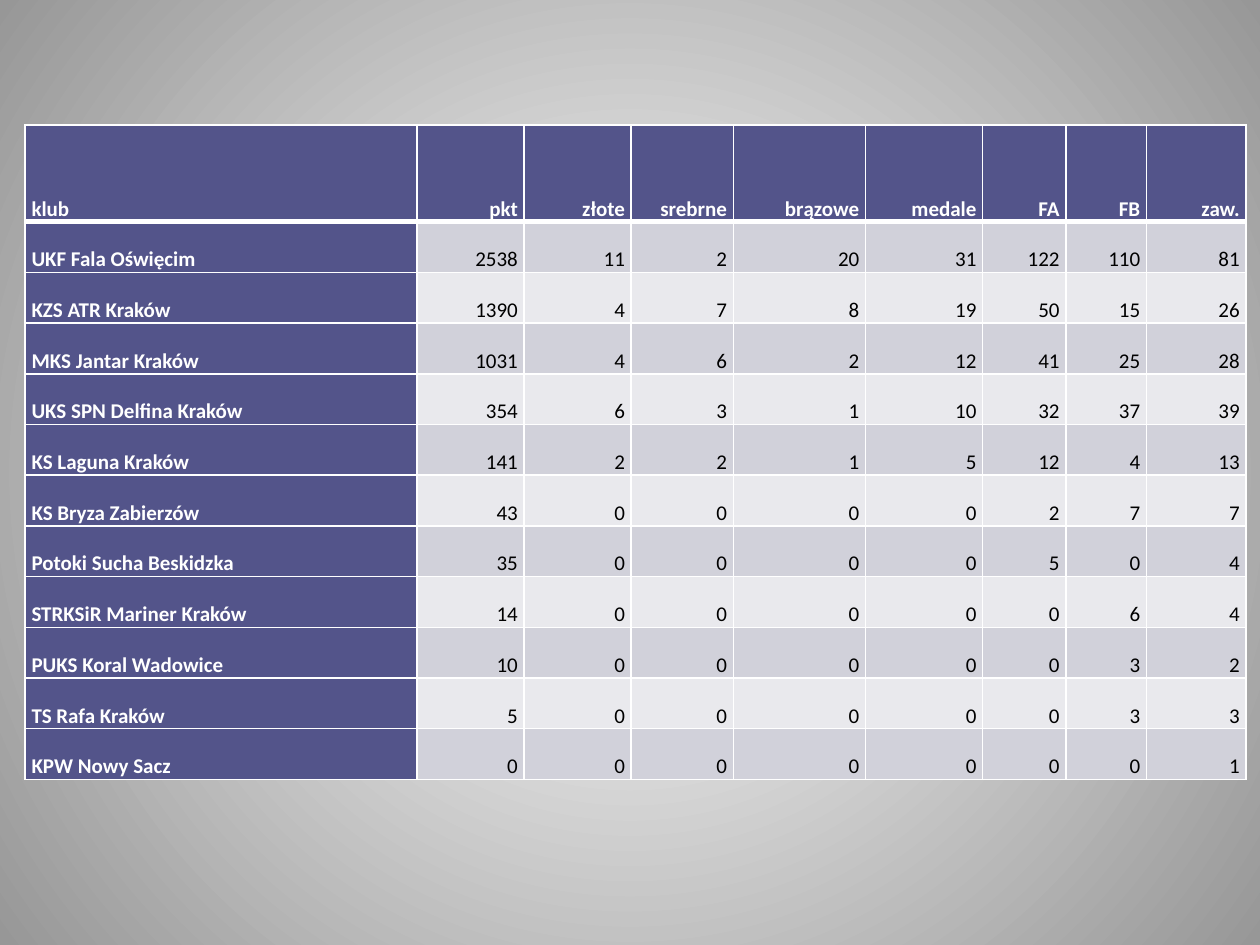
from lxml import etree
from pptx import Presentation
from pptx.dml.color import RGBColor
from pptx.enum.text import MSO_ANCHOR, PP_ALIGN
from pptx.oxml import parse_xml
from pptx.oxml.ns import nsdecls, qn
from pptx.util import Inches, Pt

BOTTOM = MSO_ANCHOR.BOTTOM
LEFT, RIGHT = PP_ALIGN.LEFT, PP_ALIGN.RIGHT

COLORS = {
    "center": "FFFFFF",
    "edge": "979797",
    "head": "53548A",
    "band_dark": "D1D1DA",
    "band_light": "E9E9ED",
    "border": "FFFFFF",
    "head_text": "FFFFFF",
    "text": "000000",
}
COL_WIDTHS = [3.11, 0.85, 0.85, 0.81, 1.05, 0.93, 0.66, 0.64, 0.79]

ROWS = [
    ("klub", "pkt", "złote", "srebrne", "brązowe", "medale", "FA", "FB", "zaw."),
    ("UKF Fala Oświęcim", 2538, 11, 2, 20, 31, 122, 110, 81),
    ("KZS ATR Kraków", 1390, 4, 7, 8, 19, 50, 15, 26),
    ("MKS Jantar Kraków", 1031, 4, 6, 2, 12, 41, 25, 28),
    ("UKS SPN Delfina Kraków", 354, 6, 3, 1, 10, 32, 37, 39),
    ("KS Laguna Kraków", 141, 2, 2, 1, 5, 12, 4, 13),
    ("KS Bryza Zabierzów", 43, 0, 0, 0, 0, 2, 7, 7),
    ("Potoki Sucha Beskidzka", 35, 0, 0, 0, 0, 5, 0, 4),
    ("STRKSiR Mariner Kraków", 14, 0, 0, 0, 0, 0, 6, 4),
    ("PUKS Koral Wadowice", 10, 0, 0, 0, 0, 0, 3, 2),
    ("TS Rafa Kraków", 5, 0, 0, 0, 0, 0, 3, 3),
    ("KPW Nowy Sacz", 0, 0, 0, 0, 0, 0, 0, 1),
]
TABLE_HEIGHT, HEAD_HEIGHT = 5.2, 0.77
ROW_HEIGHT = (TABLE_HEIGHT - HEAD_HEIGHT) / (len(ROWS) - 1)


def rgb(name):
    return RGBColor.from_string(COLORS[name])


def set_borders(cell, top, bottom):
    """Draw all four cell borders; the side borders are 1 pt wide."""
    tc_pr = cell._tc.get_or_add_tcPr()
    widths = {"lnL": 1, "lnR": 1, "lnT": top, "lnB": bottom}
    for i, (tag, width) in enumerate(widths.items()):
        tc_pr.insert(i, parse_xml(
            f'<a:{tag} {nsdecls("a")} w="{Pt(width)}"><a:solidFill>'
            f'<a:srgbClr val="{COLORS["border"]}"/></a:solidFill></a:{tag}>'))


prs = Presentation()
prs.slide_width, prs.slide_height = Inches(10), Inches(7.5)
s = prs.slides.add_slide(prs.slide_layouts[6])

# Background: circular gradient from the middle of the slide
fill = s.background.fill
fill.gradient()
for stop, position, name in zip(fill.gradient_stops, (0, 1), ("center", "edge")):
    stop.position = position
    stop.color.rgb = rgb(name)
grad = s.element.find(".//" + qn("a:gradFill"))
grad.remove(grad.find(qn("a:lin")))
circle = etree.SubElement(grad, qn("a:path"), {"path": "circle"})
etree.SubElement(circle, qn("a:fillToRect"), dict.fromkeys("ltrb", "50000"))

# Club standings
table = s.shapes.add_table(len(ROWS), len(COL_WIDTHS), Inches(0.2), Inches(0.99),
                           Inches(sum(COL_WIDTHS)), Inches(TABLE_HEIGHT)).table
for column, width in zip(table.columns, COL_WIDTHS):
    column.width = Inches(width)

for i, values in enumerate(ROWS):
    table.rows[i].height = Inches(ROW_HEIGHT if i else HEAD_HEIGHT)
    band = "band_dark" if i % 2 else "band_light"
    for j, value in enumerate(values):
        is_head = i == 0 or j == 0
        cell = table.cell(i, j)
        cell.fill.solid()
        cell.fill.fore_color.rgb = rgb("head" if is_head else band)
        set_borders(cell, top=3 if i == 1 else 1, bottom=3 if i == 0 else 1)
        cell.vertical_anchor = BOTTOM
        cell.margin_left = cell.margin_right = Inches(0.05)
        cell.margin_top = cell.margin_bottom = 0
        p = cell.text_frame.paragraphs[0]
        p.text = str(value)
        p.alignment = RIGHT if j else LEFT
        p.line_spacing = 1.07
        font = p.runs[0].font
        font.name, font.size, font.bold = "Calibri", Pt(12), is_head
        font.color.rgb = rgb("head_text" if is_head else "text")

prs.save("out.pptx")
